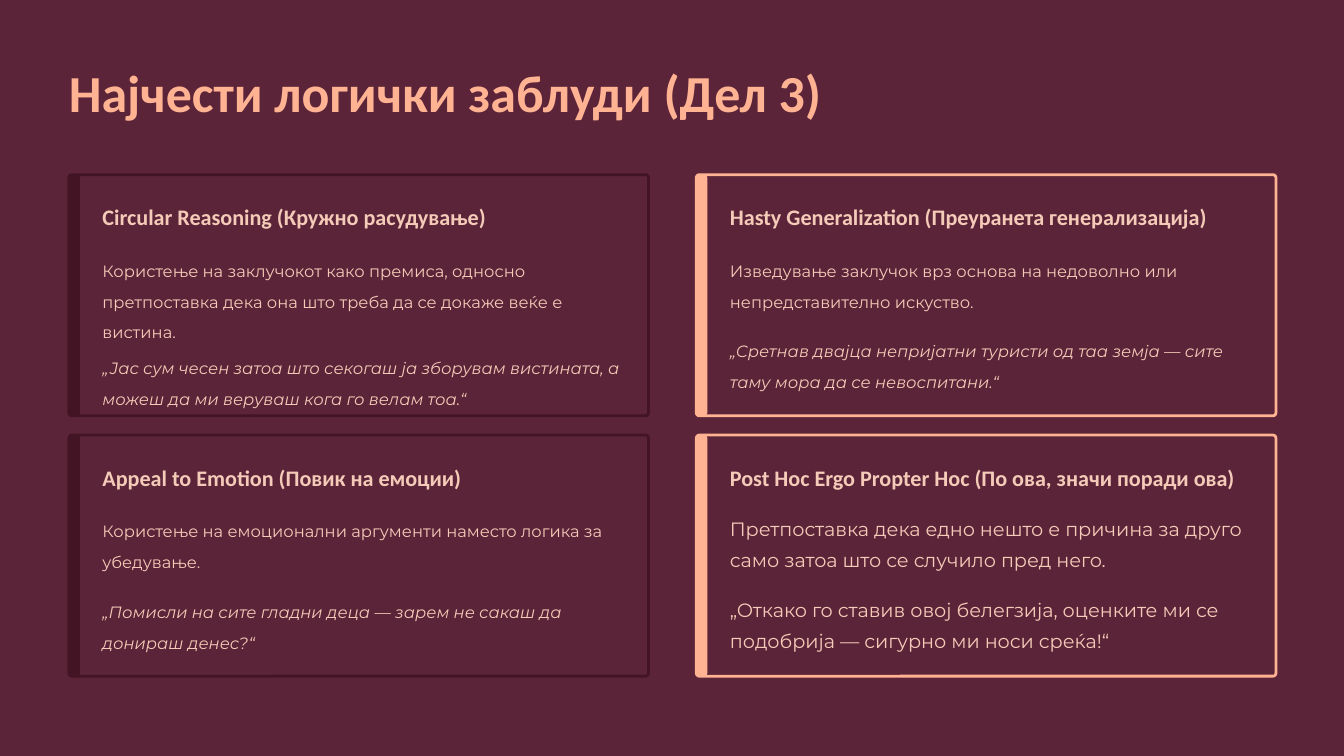
from pptx import Presentation
from pptx import util as u
from pptx.dml.color import RGBColor
from pptx.enum import shapes, text

PLUM = RGBColor(0x5C, 0x24, 0x38)
DARK = RGBColor(0x42, 0x14, 0x24)
PEACH = RGBColor(0xFF, 0xB3, 0x93)
BLUSH = RGBColor(0xF4, 0xCA, 0xB8)

CARD_WIDTH, CARD_HEIGHT, BAR_WIDTH = 6.9, 2.87, 0.13
LEFT, TOP = 0.82, 2.08
COLUMN_STEP, ROW_STEP = 7.47, 3.1
TEXT_INSET, TEXT_WIDTH = 0.4, 6.23

HEADING = {"name": "Calibri", "size": u.Pt(19), "bold": True}
BODY = {"name": "Montserrat", "size": u.Pt(14)}
QUOTE = {**BODY, "italic": True}
LARGE = {**BODY, "size": u.Pt(16.5)}

# Column, row, heading, definition, example, their formats, top of the example
CARDS = [
    (0, 0, "Circular Reasoning (Кружно расудување)",
     "Користење на заклучокот како премиса, односно претпоставка дека она "
     "што треба да се докаже веќе е вистина.",
     "„Јас сум чесен затоа што секогаш ја зборувам вистината, а можеш да ми "
     "веруваш кога го велам тоа.“", BODY, QUOTE, 2.05),
    (0, 1, "Appeal to Emotion (Повик на емоции)",
     "Користење на емоционални аргументи наместо логика за убедување.",
     "„Помисли на сите гладни деца — зарем не сакаш да донираш денес?“",
     BODY, QUOTE, 1.85),
    (1, 0, "Hasty Generalization (Преуранета генерализација)",
     "Изведување заклучок врз основа на недоволно или непредставително "
     "искуство.",
     "„Сретнав двајца непријатни туристи од таа земја — сите таму мора да се "
     "невоспитани.“", BODY, QUOTE, 1.85),
    (1, 1, "Post Hoc Ergo Propter Hoc (По ова, значи поради ова)",
     "Претпоставка дека едно нешто е причина за друго само затоа што се "
     "случило пред него.",
     "„Откако го ставив овој белегзија, оценките ми се подобрија — сигурно ми "
     "носи среќа!“", LARGE, LARGE, 1.85),
]


def add_text(page, left, top, width, height, words, line_pt, style, color=BLUSH):
    box = page.shapes.add_textbox(*map(u.Inches, (left, top, width, height)))
    frame = box.text_frame
    settings = {"word_wrap": True, "vertical_anchor": text.MSO_ANCHOR.TOP,
                "margin_left": 0, "margin_right": 0,
                "margin_top": 0, "margin_bottom": 0}
    for key, value in settings.items():
        setattr(frame, key, value)
    para = frame.paragraphs[0]
    para.line_spacing = u.Pt(line_pt)
    span = para.add_run()
    span.text = words
    for key, value in style.items():
        setattr(span.font, key, value)
    span.font.color.rgb = color


def add_panel(page, left, top, width, corner, fill, outline=None):
    panel = page.shapes.add_shape(
        shapes.MSO_SHAPE.ROUNDED_RECTANGLE,
        *map(u.Inches, (left, top, width, CARD_HEIGHT)))
    panel.adjustments[0] = corner
    panel.shadow.inherit = False
    panel.fill.solid()
    panel.fill.fore_color.rgb = fill
    if outline is None:
        panel.line.fill.background()
    else:
        panel.line.color.rgb = outline
        panel.line.width = u.Pt(2.4)


def add_card(page, column, row, heading, definition, example,
             body_style, example_style, example_top):
    left, top = LEFT + column * COLUMN_STEP, TOP + row * ROW_STEP
    accent = (DARK, PEACH)[column]
    # Frame and side bar
    add_panel(page, left, top, CARD_WIDTH, 0.012, PLUM, accent)
    add_panel(page, left, top, BAR_WIDTH, 0.263, accent)
    # Heading, definition and example
    for offset, height, words, line_pt, style in (
            (0.27, 0.39, heading, 28, HEADING),
            (0.89, 0.75, definition, 26.5, body_style),
            (example_top, 0.75, example, 26.5, example_style)):
        add_text(page, left + TEXT_INSET, top + offset, TEXT_WIDTH, height,
                 words, line_pt, style)


def main():
    deck = Presentation()
    deck.slide_width, deck.slide_height = u.Inches(16), u.Inches(9)
    page = deck.slides.add_slide(deck.slide_layouts[6])

    # Background
    page.background.fill.solid()
    page.background.fill.fore_color.rgb = PLUM

    # Title
    add_text(page, LEFT, 0.69, 10.05, 0.78, "Најчести логички заблуди (Дел 3)",
             56, {**HEADING, "size": u.Pt(44.5)}, PEACH)

    # Fallacy cards
    for card in CARDS:
        add_card(page, *card)

    deck.save("out.pptx")


if __name__ == "__main__":
    main()
